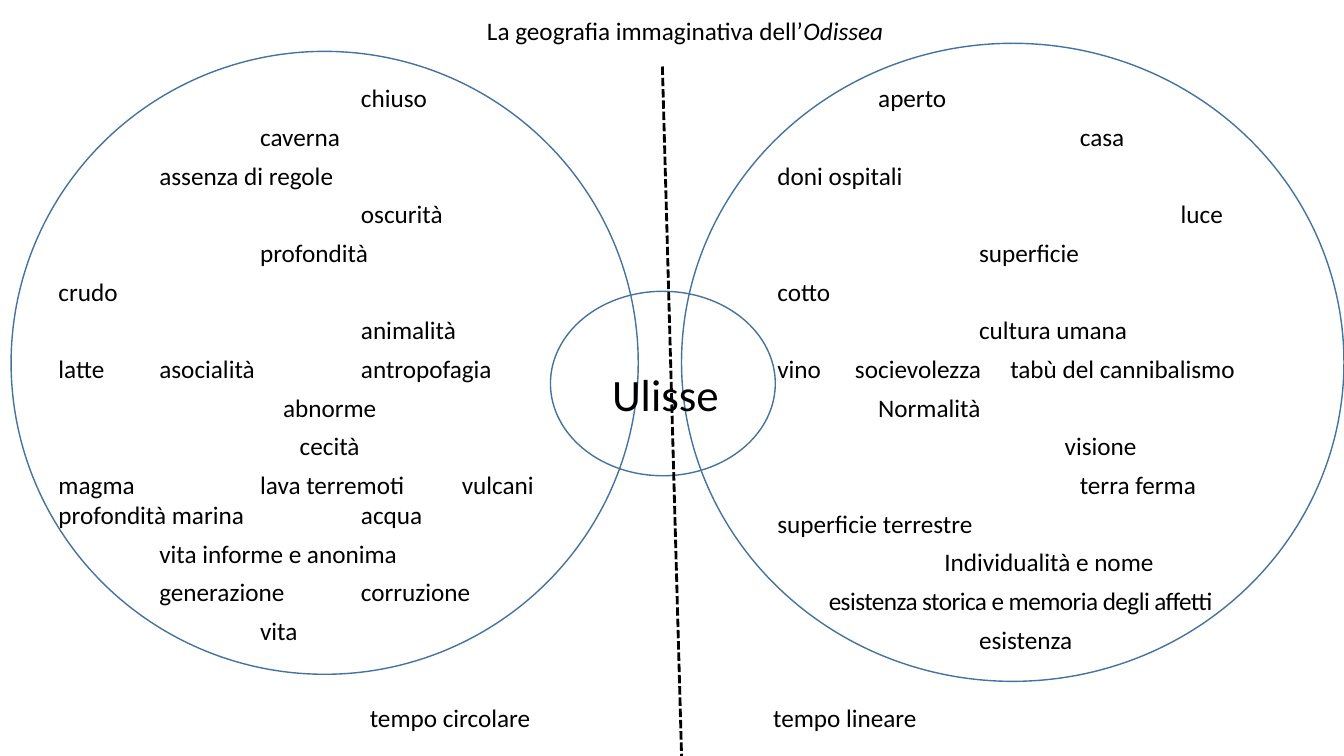
"""Build the slide on the imaginative geography of the Odyssey."""
import pptx
import pptx.dml.color
import pptx.enum.dml
import pptx.enum.shapes
import pptx.enum.text
import pptx.oxml.ns
import pptx.util
from lxml import etree

Inches, Pt = pptx.util.Inches, pptx.util.Pt
ALIGN = pptx.enum.text.PP_ALIGN
COLORS = {"text": "000000", "circle": "43739E", "divider": "000000"}
FONT = "Calibri"
TITLE = ("La geografia immaginativa dell’", "Odissea")

# Each line holds its indent in inches (None centres it), its text and any tab step or spacing.
CLOSED_WORLD = [
    (3, "chiuso", {}),
    (2, "caverna", {}),
    (1, "assenza di regole", {}),
    (3, "oscurità", {}),
    (2, "profondità", {}),
    (0, "crudo", {}),
    (3, "animalità", {}),
    (0, "latte\tasocialità\t\tantropofagia", {}),
    (None, "abnorme", {}),
    (None, "cecità", {}),
    (0, "magma\t\tlava terremoti\tvulcani\vprofondità marina\t\tacqua", {}),
    (1, "vita informe e anonima", {}),
    (0, "\tgenerazione\tcorruzione", {}),
    (2, "vita", {}),
]
OPEN_WORLD = [
    (1, "aperto", {}),
    (3, "casa", {}),
    (0, "doni ospitali", {}),
    (4, "luce", {}),
    (2, "superficie", {}),
    (0, "cotto", {}),
    (2, "cultura umana", {}),
    (0, "vino\tsocievolezza\ttabù del cannibalismo", {"step": 0.77}),
    (1, "Normalità", {}),
    (2.85, "visione", {}),
    (3, "terra ferma", {}),
    (0, "superficie terrestre", {}),
    (None, "Individualità e nome", {}),
    (0.51, "esistenza storica e memoria degli affetti", {"spacing": -0.4}),
    (2, "esistenza", {}),
]
TIMES = [(0, "tempo circolare\ttempo lineare", {"step": 4})]
HERO = [(None, "Ulisse", {})]
CIRCLES = [(0.11, 0.51, 6.22, 6.18), (6.76, 0.43, 6.57, 6.33), (5.46, 2.89, 2.23, 1.83)]
DIVIDER = (6.57, 0.66, 6.76, 7.5)


def rgb(name):
    """Return a palette colour."""
    return pptx.dml.color.RGBColor.from_string(COLORS[name])


def place(sp, box):
    """Position a text shape and anchor its text at the top."""
    sp.left, sp.top, sp.width, sp.height = map(Inches, box)
    tf = sp.text_frame
    tf.word_wrap = True
    tf.auto_size = pptx.enum.text.MSO_AUTO_SIZE.NONE
    tf.vertical_anchor = pptx.enum.text.MSO_ANCHOR.TOP
    return tf


def style(r, size):
    """Apply the common font."""
    r.font.name, r.font.size = FONT, Pt(size)
    r.font.color.rgb = rgb("text")


def write_lines(sp, box, lines, size=18):
    """Fill a shape with indented or centred lines on an even tab grid."""
    tf = place(sp, box)
    for i, (indent, text, options) in enumerate(lines):
        p = tf.paragraphs[0] if i == 0 else tf.add_paragraph()
        p.text = text
        p.alignment = ALIGN.CENTER if indent is None else ALIGN.LEFT
        p.space_before, p.space_after = Pt(3 if i else 0), Pt(3)
        ppr = p._p.get_or_add_pPr()
        ppr.set("marL", str(Inches(indent or 0)))
        ppr.set("indent", "0")
        ppr.set("defTabSz", str(Inches(options.get("step", 1))))
        etree.SubElement(ppr, pptx.oxml.ns.qn("a:buNone"))
        for r in p.runs:
            style(r, size)
            if "spacing" in options:
                r._r.get_or_add_rPr().set("spc", str(round(options["spacing"] * 100)))


def main():
    """Assemble and save the slide."""
    prs = pptx.Presentation()
    prs.slide_width, prs.slide_height = Inches(13.33), Inches(7.5)
    slide = prs.slides.add_slide(prs.slide_layouts.get_by_name("Two Content"))
    shapes = slide.shapes
    title, closed, opened = slide.placeholders

    p = place(title, (0.63, 0.1, 12.33, 0.4)).paragraphs[0]
    p.alignment = ALIGN.CENTER
    for text in TITLE:
        r = p.add_run()
        r.text = text
        style(r, 18)
    r.font.italic = True

    write_lines(closed, (0.48, 0.77, 5.58, 5.74), CLOSED_WORLD)
    write_lines(opened, (7.61, 0.77, 5.59, 5.82), OPEN_WORLD)

    for box in CIRCLES:
        sp = shapes.add_shape(pptx.enum.shapes.MSO_SHAPE.OVAL, *map(Inches, box))
        sp.shadow.inherit = False
        sp.fill.background()
        sp.line.color.rgb, sp.line.width = rgb("circle"), Pt(1)

    write_lines(shapes.add_textbox(0, 0, 0, 0), (5.72, 3.59, 1.76, 0.64), HERO, 32)

    line = shapes.add_connector(pptx.enum.shapes.MSO_CONNECTOR.STRAIGHT, *map(Inches, DIVIDER))
    line.line.color.rgb, line.line.width = rgb("divider"), Pt(2)
    line.line.dash_style = pptx.enum.dml.MSO_LINE.SQUARE_DOT
    etree.SubElement(line._element.spPr, pptx.oxml.ns.qn("a:effectLst"))

    write_lines(shapes.add_textbox(0, 0, 0, 0), (3.57, 6.92, 6.57, 0.4), TIMES)
    prs.save("out.pptx")


if __name__ == "__main__":
    main()
